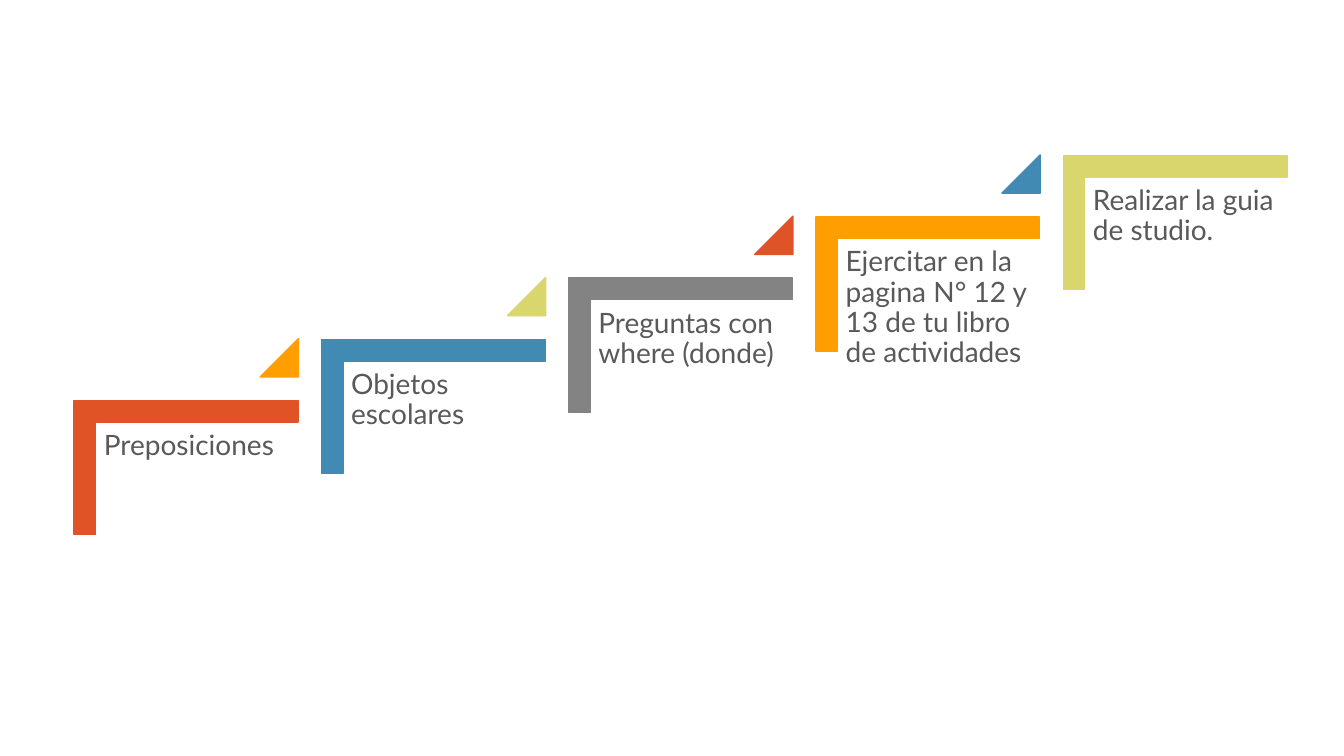
from dataclasses import dataclass
from typing import Optional

from pptx import Presentation
from pptx.dml.color import RGBColor
from pptx.enum.shapes import MSO_SHAPE
from pptx.enum.text import MSO_ANCHOR, PP_ALIGN
from pptx.util import Inches, Pt

CORNER = MSO_SHAPE.CORNER
TRIANGLE = MSO_SHAPE.ISOSCELES_TRIANGLE
TOP = MSO_ANCHOR.TOP
LEFT = PP_ALIGN.LEFT

RED = RGBColor(0xDF, 0x53, 0x27)
ORANGE = RGBColor(0xFE, 0x9E, 0x00)
BLUE = RGBColor(0x41, 0x8A, 0xB3)
LIME = RGBColor(0xD9, 0xD6, 0x6D)
GRAY = RGBColor(0x83, 0x83, 0x83)
TEXT_COLOR = RGBColor(0x59, 0x59, 0x59)


@dataclass
class Step:
    text: str
    color: RGBColor
    triangle_color: Optional[RGBColor] = None


STEPS = [
    Step("Preposiciones", RED, ORANGE),
    Step("Objetos escolares", BLUE, LIME),
    Step("Preguntas con where (donde)", GRAY, RED),
    Step("Ejercitar en la pagina N° 12 y 13 de tu libro de actividades", ORANGE, BLUE),
    Step("Realizar la guia de studio.", LIME),
]

# Staircase: the first step's place and the rise and run to the last one
FIRST_LEFT, FIRST_TOP = 0.95, 3.53
RUN = 9.81 / (len(STEPS) - 1)
RISE = 2.43 / (len(STEPS) - 1)


def add_colored_shape(slide, kind: MSO_SHAPE, left: float, top: float,
                      width: float, height: float, color: RGBColor,
                      adjustments: list[float]):
    shape = slide.shapes.add_shape(
        kind, Inches(left), Inches(top), Inches(width), Inches(height))
    shape.shadow.inherit = False
    shape.fill.solid()
    shape.fill.fore_color.rgb = color
    shape.line.color.rgb = color
    shape.line.width = Pt(1)
    for index, value in enumerate(adjustments):
        shape.adjustments[index] = value
    return shape


def add_label(slide, text: str, left: float, top: float) -> None:
    label = slide.shapes.add_textbox(
        Inches(left), Inches(top), Inches(2), Inches(1.76))
    frame = label.text_frame
    frame.word_wrap = True
    frame.vertical_anchor = TOP
    frame.margin_left = frame.margin_right = Inches(0.08)
    frame.margin_top = frame.margin_bottom = Inches(0.08)
    paragraph = frame.paragraphs[0]
    paragraph.text = text
    paragraph.alignment = LEFT
    paragraph.line_spacing = 0.9
    paragraph.font.name = "Lato"
    paragraph.font.size = Pt(20)
    paragraph.font.color.rgb = TEXT_COLOR


def add_step(slide, step: Step, left: float, top: float) -> None:
    # Corner bracket, turned so that its angle is at the top left
    corner = add_colored_shape(slide, CORNER, left + 0.23, top, 1.33, 2.22,
                               step.color, [0.16, 0.16])
    corner.rotation = 90
    add_label(slide, step.text, left, top + 0.67)
    # Triangle pointing up to the next step
    if step.triangle_color is not None:
        add_colored_shape(slide, TRIANGLE, left + 1.63, top - 0.17, 0.38, 0.38,
                          step.triangle_color, [1])


def main() -> None:
    presentation = Presentation()
    presentation.slide_width = Inches(13.33)
    presentation.slide_height = Inches(7.5)
    slide = presentation.slides.add_slide(presentation.slide_layouts[6])
    for index, step in enumerate(STEPS):
        add_step(slide, step, FIRST_LEFT + index * RUN, FIRST_TOP - index * RISE)
    presentation.save("out.pptx")


if __name__ == "__main__":
    main()
